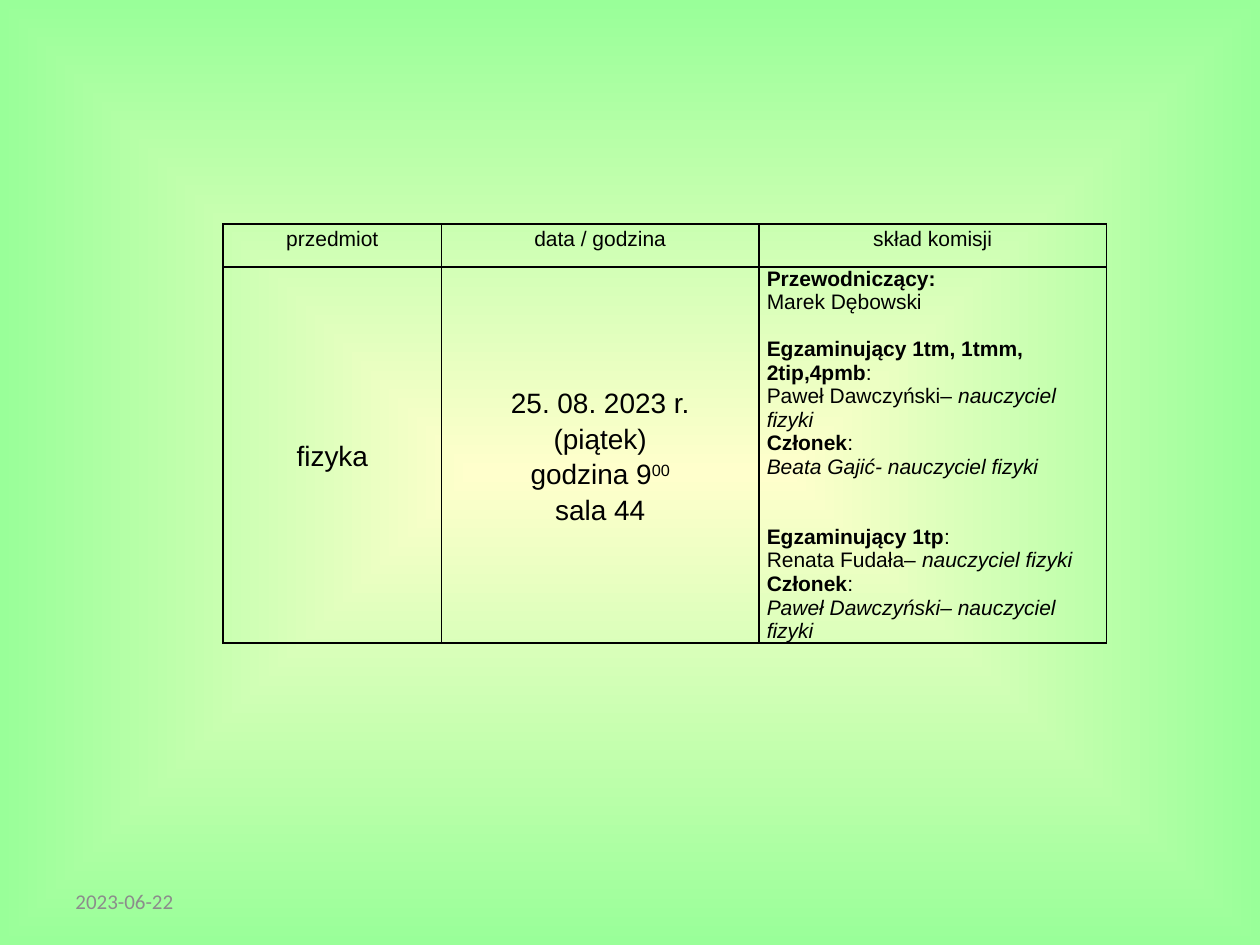
from dataclasses import dataclass

import lxml.etree
import pptx
import pptx.dml.color
import pptx.enum.text
import pptx.oxml
import pptx.oxml.ns
import pptx.util

Pt = pptx.util.Pt
ALIGN = pptx.enum.text.PP_ALIGN
ANCHOR = pptx.enum.text.MSO_ANCHOR
COLORS = {"center": "FFFFCC", "edge": "99FF99", "text": "000000",
          "border": "000000", "date": "8C8C8C"}
COLUMN_WIDTHS = (124.8, 181.4, 198.6)
ROW_HEIGHTS = (24.5, 214.8)
BLANK_LINE = 13.4


@dataclass(frozen=True)
class Span:
    text: str
    bold: bool = False
    italic: bool = False
    superscript: bool = False


@dataclass(frozen=True)
class Line:
    spans: tuple[Span, ...]
    space_before: float = 0


@dataclass(frozen=True)
class CellContent:
    lines: tuple[Line, ...]
    size: float = 12
    centered: bool = True
    anchor: ANCHOR = ANCHOR.MIDDLE


def plain(text: str) -> Line:
    return Line((Span(text),))


def role(text: str, space_before: float = 0) -> Line:
    return Line((Span(text, bold=True), Span(":")), space_before)


def examiner(name: str) -> Line:
    return Line((Span(f"{name}– "), Span("nauczyciel fizyki", italic=True)))


def member(text: str) -> Line:
    return Line((Span(text, italic=True),))


def header(text: str) -> CellContent:
    return CellContent((plain(text),), anchor=ANCHOR.TOP)


ROWS = (
    (header("przedmiot"), header("data / godzina"), header("skład komisji")),
    (
        CellContent((plain("fizyka"),), size=16),
        CellContent((
            plain("25. 08. 2023 r."),
            plain("(piątek)"),
            Line((Span("godzina 9"), Span("00", superscript=True))),
            plain("sala 44"),
        ), size=16),
        CellContent((
            Line((Span("Przewodniczący:", bold=True),)),
            plain("Marek Dębowski"),
            role("Egzaminujący 1tm, 1tmm, 2tip,4pmb", BLANK_LINE),
            examiner("Paweł Dawczyński"),
            role("Członek"),
            member("Beata Gajić- nauczyciel fizyki"),
            role("Egzaminujący 1tp", 2 * BLANK_LINE),
            examiner("Renata Fudała"),
            role("Członek"),
            member("Paweł Dawczyński– nauczyciel fizyki"),
        ), centered=False),
    ),
)


def rgb(name: str) -> pptx.dml.color.RGBColor:
    return pptx.dml.color.RGBColor.from_string(COLORS[name])


def style_font(font, name: str, size: float, color: str) -> None:
    font.name = name
    font.size = Pt(size)
    font.color.rgb = rgb(color)


def paint_background(slide) -> None:
    fill = slide.background.fill
    fill.gradient()
    for stop, name in zip(fill.gradient_stops, ("center", "edge")):
        stop.color.rgb = rgb(name)
    # Turn the linear gradient into one that spreads from the centre
    linear = slide.element.find(".//" + pptx.oxml.ns.qn("a:lin"))
    linear.getparent().replace(linear, pptx.oxml.parse_xml(
        f'<a:path {pptx.oxml.ns.nsdecls("a")} path="shape">'
        '<a:fillToRect l="50000" t="50000" r="50000" b="50000"/></a:path>'))


def add_borders(cell) -> None:
    properties = cell._tc.get_or_add_tcPr()
    for position, side in enumerate("LRTB"):
        properties.insert(position, pptx.oxml.parse_xml(
            f'<a:ln{side} {pptx.oxml.ns.nsdecls("a")} w="{Pt(1)}"><a:solidFill>'
            f'<a:srgbClr val="{COLORS["border"]}"/></a:solidFill></a:ln{side}>'))


def fill_cell(cell, content: CellContent) -> None:
    cell.fill.background()
    add_borders(cell)
    cell.margin_left = cell.margin_right = Pt(4.5)
    cell.margin_top = cell.margin_bottom = 0
    cell.vertical_anchor = content.anchor
    for index, line in enumerate(content.lines):
        frame = cell.text_frame
        paragraph = frame.add_paragraph() if index else frame.paragraphs[0]
        paragraph.alignment = ALIGN.CENTER if content.centered else ALIGN.LEFT
        if content.centered:
            paragraph.line_spacing = 1.15
        if line.space_before:
            paragraph.space_before = Pt(line.space_before)
        style_font(paragraph.font, "Arial", content.size, "text")
        for span in line.spans:
            run = paragraph.add_run()
            run.text = span.text
            run.font.bold = span.bold
            run.font.italic = span.italic
            if span.superscript:
                run._r.get_or_add_rPr().set("baseline", "30000")


def add_exam_table(slide) -> None:
    table = slide.shapes.add_table(
        len(ROW_HEIGHTS), len(COLUMN_WIDTHS), Pt(127.5), Pt(128),
        Pt(sum(COLUMN_WIDTHS)), Pt(sum(ROW_HEIGHTS))).table
    table.first_row = False
    table.horz_banding = False
    for column, width in zip(table.columns, COLUMN_WIDTHS):
        column.width = Pt(width)
    for row, height, contents in zip(table.rows, ROW_HEIGHTS, ROWS):
        row.height = Pt(height)
        for cell, content in zip(row.cells, contents):
            fill_cell(cell, content)


def add_date(slide) -> None:
    frame = slide.shapes.add_textbox(Pt(36), Pt(500.5), Pt(168), Pt(28.75)).text_frame
    frame.word_wrap = True
    frame.vertical_anchor = ANCHOR.MIDDLE
    paragraph = frame.paragraphs[0]
    paragraph.text = "2023-06-22"
    style_font(paragraph.font, "Calibri", 12, "date")


def main() -> None:
    presentation = pptx.Presentation()
    presentation.slide_width = Pt(720)
    presentation.slide_height = Pt(540)
    slide = presentation.slides.add_slide(presentation.slide_layouts[6])
    paint_background(slide)
    add_exam_table(slide)
    add_date(slide)
    presentation.save("out.pptx")


if __name__ == "__main__":
    main()
